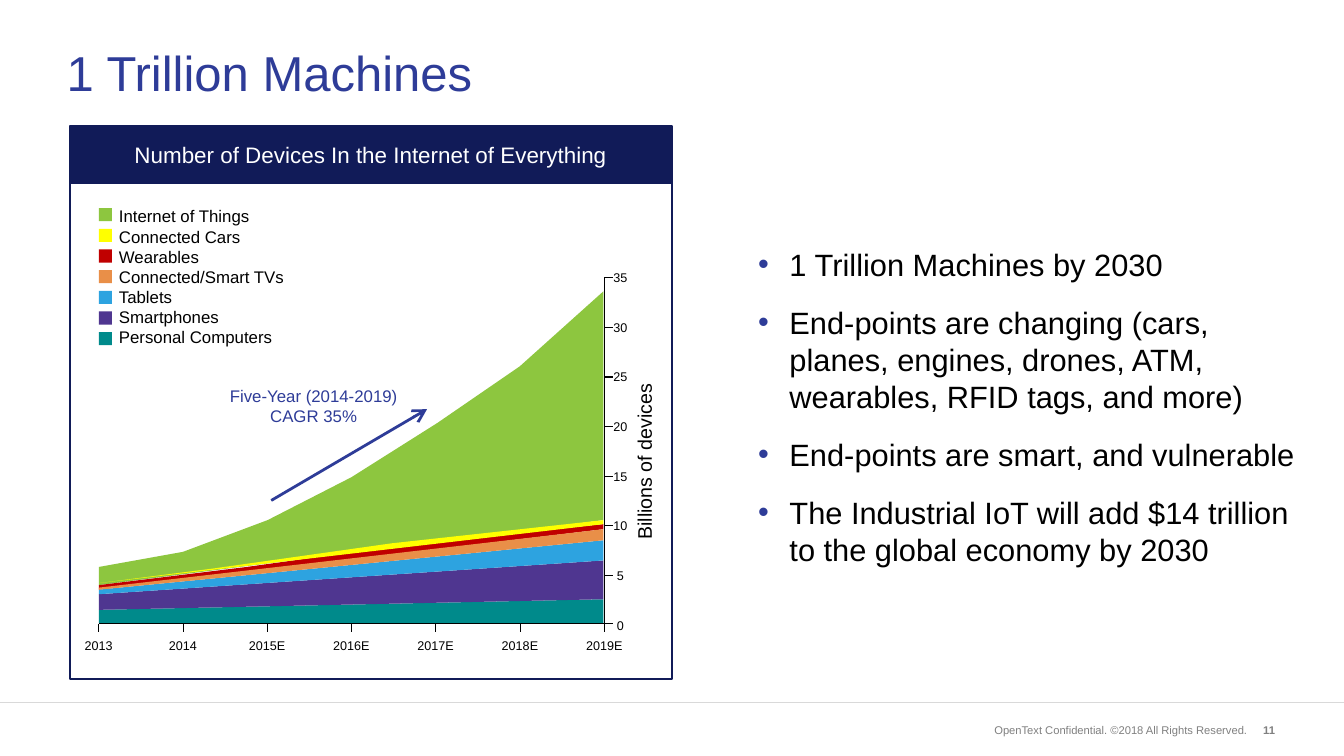
"""Build the slide on connected devices, with a drawn area diagram and key points."""
from lxml.etree import SubElement
from pptx import Presentation
from pptx.dml.color import RGBColor
from pptx.enum.shapes import MSO_CONNECTOR, MSO_SHAPE
from pptx.enum.text import MSO_ANCHOR, PP_ALIGN
from pptx.oxml import parse_xml
from pptx.oxml.ns import nsdecls, qn
from pptx.util import Inches, Pt

COLORS = {
    "navy": "111B58", "blue": "2E3C98", "black": "000000", "white": "FFFFFF",
    "gray": "808080", "rule": "D9D9D9",
    "green": "8DC63F", "yellow": "FFFF00", "red": "C00000", "orange": "E98F48",
    "sky": "2DA3E0", "purple": "4F3690", "teal": "008A8B",
}
TITLE = "1 Trillion Machines"
PANEL_HEADING = "Number of Devices In the Internet of Everything"
GROWTH_NOTE = ["Five-Year (2014-2019)", "CAGR 35%"]
AXIS_TITLE = "Billions of devices"
YEARS = ["2013", "2014", "2015E", "2016E", "2017E", "2018E", "2019E"]
BILLIONS = ["35", "30", "25", "20", "15", "10", "5", "0"]
POINTS = [
    "1 Trillion Machines by 2030",
    "End-points are changing (cars, planes, engines, drones, ATM, wearables, RFID tags, and more)",
    "End-points are smart, and vulnerable",
    "The Industrial IoT will add $14 trillion to the global economy by 2030",
]
COPYRIGHT = "OpenText Confidential. ©2018 All Rights Reserved."
PAGE = "11"

WIDTH, HEIGHT = 26.66, 15
PANEL = (1.38, 2.5, 11.95, 10.98)
HEADING_HEIGHT = 1.15
LEFT, RIGHT = 1.96, 11.97
AXIS_X, AXIS_TOP, AXIS_BOTTOM = 11.99, 5.51, 12.38
YEAR_STEP = (AXIS_X - LEFT) / (len(YEARS) - 1)
BILLIONS_STEP = 0.985
TICK = 0.16
LEGEND_TOP, LEGEND_STEP, SWATCH = 4.13, 0.41, 0.26
FOOTER_RULE = 13.94


def edge(start, end, *between):
    return [(LEFT, start), *between, (RIGHT, end)]


DEVICES = [
    ("Internet of Things", "green",
     edge(11.25, 5.78, (3.63, 10.95), (5.31, 10.32), (6.97, 9.47), (8.68, 8.39), (10.31, 7.27)),
     edge(11.61, 10.32)),
    ("Connected Cars", "yellow",
     edge(11.57, 10.32, (4.23, 11.28), (7.77, 10.78)), edge(11.57, 10.4)),
    ("Wearables", "red",
     edge(11.61, 10.4, (4.89, 11.25), (8.32, 10.77)), edge(11.7, 10.5)),
    ("Connected/Smart TVs", "orange", edge(11.66, 10.5), edge(11.7, 10.72)),
    ("Tablets", "sky", edge(11.7, 10.72), edge(11.79, 11.12)),
    ("Smartphones", "purple", edge(11.79, 11.12), edge(12.1, 11.89)),
    ("Personal Computers", "teal", edge(12.1, 11.89), edge(12.37, 12.37)),
]
STACKING = ["green", "teal", "purple", "red", "yellow", "sky", "orange"]


def rgb(color):
    return RGBColor.from_string(COLORS[color])


def fill_text(frame, lines, size, color, align=PP_ALIGN.LEFT, anchor=MSO_ANCHOR.TOP, bold=False):
    for attribute, value in {"word_wrap": True, "vertical_anchor": anchor}.items():
        setattr(frame, attribute, value)
    frame.text = "\n".join(lines)
    formats = {"name": "Arial", "size": Pt(size), "bold": bold}
    for paragraph in frame.paragraphs:
        paragraph.alignment = align
        for attribute, value in formats.items():
            setattr(paragraph.font, attribute, value)
        paragraph.font.color.rgb = rgb(color)


def add_text(slide, box, lines, size, color, **formats):
    label = slide.shapes.add_textbox(*map(Inches, box))
    fill_text(label.text_frame, lines, size, color, **formats)
    return label


def paint(shape, fill=None, line=None):
    shape.shadow.inherit = False
    if fill:
        shape.fill.solid()
        shape.fill.fore_color.rgb = rgb(fill)
    else:
        shape.fill.background()
    if line:
        shape.line.color.rgb = rgb(line)
        shape.line.width = Pt(3)
    else:
        shape.line.fill.background()


def add_rect(slide, box, **colors):
    rect = slide.shapes.add_shape(MSO_SHAPE.RECTANGLE, *map(Inches, box))
    paint(rect, **colors)
    return rect


def add_line(slide, ends, color, width, arrow=False):
    line = slide.shapes.add_connector(MSO_CONNECTOR.STRAIGHT, *map(Inches, ends))
    line.line.color.rgb = rgb(color)
    line.line.width = Pt(width)
    properties = line.element.spPr
    if arrow:
        SubElement(properties.find(qn("a:ln")), qn("a:tailEnd"), type="arrow", w="lg", len="lg")
    SubElement(properties, qn("a:effectLst"))


def add_bands(slide):
    for _, color, top, bottom in sorted(DEVICES, key=lambda device: STACKING.index(device[1])):
        start, *rest = [(Inches(x), Inches(y)) for x, y in top + bottom[::-1]]
        builder = slide.shapes.build_freeform(*start)
        builder.add_line_segments(rest)
        paint(builder.convert_to_shape(), fill=color)


def add_axes(slide):
    axis_lines = [
        (LEFT, AXIS_BOTTOM, AXIS_X + TICK, AXIS_BOTTOM),
        (AXIS_X, AXIS_TOP, AXIS_X, AXIS_BOTTOM),
    ]
    for column, year in enumerate(YEARS):
        x = LEFT + column * YEAR_STEP
        axis_lines.append((x, AXIS_BOTTOM, x, AXIS_BOTTOM + TICK))
        add_text(slide, (x - 0.75, 12.6, 1.49, 0.4), [year], 18, "black", align=PP_ALIGN.CENTER)
    for row, amount in enumerate(BILLIONS):
        y = AXIS_TOP + row * BILLIONS_STEP
        if amount != "0":
            axis_lines.append((AXIS_X, y, AXIS_X + TICK, y))
        add_text(slide, (12.04, y - 0.2, 0.53, 0.4), [amount], 18, "black",
                 align=PP_ALIGN.CENTER)
    for ends in axis_lines:
        add_line(slide, ends, "black", 1.5)


def add_legend(slide):
    add_text(slide, (2.26, 4.04, 3.62, 2.93), [device[0] for device in DEVICES], 24, "black")
    for row, (_, color, _, _) in enumerate(DEVICES):
        add_rect(slide, (LEFT, LEGEND_TOP + row * LEGEND_STEP, SWATCH, SWATCH), fill=color)


def add_points(slide):
    frame = add_text(slide, (14.84, 3.13, 11.11, 9.87), POINTS, 44, "black",
                     anchor=MSO_ANCHOR.MIDDLE).text_frame
    for side in ("left", "right", "top", "bottom"):
        setattr(frame, f"margin_{side}", Inches(0.2))
    bullet_parts = [
        f'<a:buClr {nsdecls("a")}><a:srgbClr val="{COLORS["blue"]}"/></a:buClr>',
        f'<a:buFont {nsdecls("a")} typeface="Arial"/>',
        f'<a:buChar {nsdecls("a")} char="•"/>',
    ]
    for row, paragraph in enumerate(frame.paragraphs):
        paragraph.space_before = Pt(30 if row else 0)
        properties = paragraph._p.get_or_add_pPr()
        properties.set("marL", str(Inches(0.62)))
        properties.set("indent", str(-Inches(0.62)))
        defaults = properties.find(qn("a:defRPr"))
        for part in bullet_parts:
            defaults.addprevious(parse_xml(part))


def main():
    deck = Presentation()
    deck.slide_width, deck.slide_height = Inches(WIDTH), Inches(HEIGHT)
    slide = deck.slides.add_slide(deck.slide_layouts[5])

    title = slide.shapes.title
    for attribute, value in zip(("left", "top", "width", "height"), (1.22, 0.38, 24.08, 2.13)):
        setattr(title, attribute, Inches(value))
    fill_text(title.text_frame, [TITLE], 70, "blue", anchor=MSO_ANCHOR.MIDDLE)
    title.text_frame.paragraphs[0].line_spacing = Pt(80)

    add_legend(slide)
    add_bands(slide)
    add_axes(slide)
    add_text(slide, (11.03, 8.88, 3.5, 0.57), [AXIS_TITLE], 28, "black",
             align=PP_ALIGN.CENTER).rotation = 270
    add_text(slide, (4.41, 7.61, 3.62, 0.91), GROWTH_NOTE, 24, "blue", align=PP_ALIGN.CENTER)
    add_line(slide, (5.38, 9.93, 8.47, 8.12), "blue", 4, arrow=True)
    add_rect(slide, PANEL, line="navy")
    heading = add_rect(slide, (*PANEL[:3], HEADING_HEIGHT), fill="navy")
    fill_text(heading.text_frame, [PANEL_HEADING], 32, "white",
              align=PP_ALIGN.CENTER, anchor=MSO_ANCHOR.MIDDLE)
    add_points(slide)

    add_line(slide, (0, FOOTER_RULE, WIDTH, FOOTER_RULE), "rule", 1)
    add_text(slide, (18.92, 14.29, 5.92, 0.37), [COPYRIGHT], 16, "gray",
             align=PP_ALIGN.RIGHT, anchor=MSO_ANCHOR.MIDDLE)
    add_text(slide, (24.68, 14.3, 0.71, 0.37), [PAGE], 16, "gray",
             align=PP_ALIGN.RIGHT, bold=True)
    deck.save("out.pptx")


if __name__ == "__main__":
    main()
